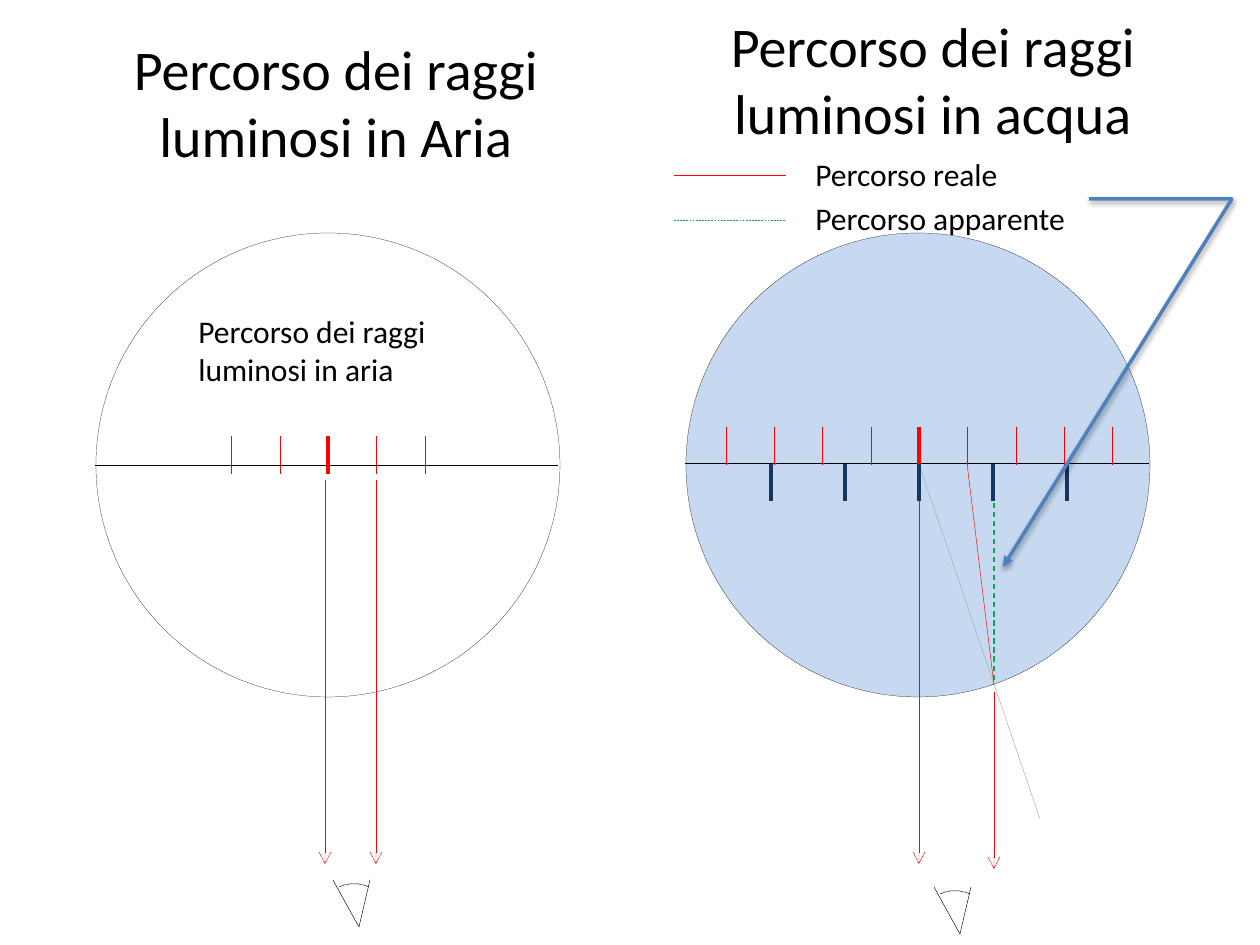
from dataclasses import dataclass
from math import cos, radians, sin

from lxml.etree import SubElement
from pptx import Presentation
from pptx.dml.color import RGBColor
from pptx.enum.dml import MSO_LINE_DASH_STYLE as Dash
from pptx.enum.shapes import MSO_CONNECTOR as Connector, MSO_SHAPE as Shape
from pptx.enum.text import MSO_AUTO_SIZE as AutoSize, PP_ALIGN as Align
from pptx.oxml.ns import qn
from pptx.util import Pt

EMU_PER_PX = 914400 / 126

BLACK = RGBColor(0x00, 0x00, 0x00)
RED = RGBColor(0xFF, 0x00, 0x00)
GREEN = RGBColor(0x00, 0xB0, 0x50)
GRAY = RGBColor(0xA6, 0xA6, 0xA6)
NAVY = RGBColor(0x17, 0x37, 0x5E)
BLUE = RGBColor(0x4F, 0x81, 0xBD)
WATER = RGBColor(0xC6, 0xD9, 0xF1)

THIN, THICK = 0.25, 2.25


@dataclass(frozen=True)
class Line:
    x1: int
    y1: int
    x2: int
    y2: int
    color: RGBColor = RED
    width: float = THIN
    dashed: bool = False
    arrow: str | None = None


@dataclass(frozen=True)
class Scale:
    """A row of evenly spaced ticks, counted from the centre."""
    center: int
    step: float
    first: int
    last: int
    top: int
    bottom: int
    color: RGBColor = RED
    all_thick: bool = False


def px(value: float) -> int:
    return round(value * EMU_PER_PX)


def add_arrowhead(shape, kind: str) -> None:
    SubElement(shape.line._get_or_add_ln(), qn("a:tailEnd"), type=kind)


def draw_line(shapes, line: Line) -> None:
    connector = shapes.add_connector(
        Connector.STRAIGHT, px(line.x1), px(line.y1), px(line.x2), px(line.y2))
    connector.line.color.rgb = line.color
    connector.line.width = Pt(line.width)
    if line.dashed:
        connector.line.dash_style = Dash.DASH
    if line.arrow:
        add_arrowhead(connector, line.arrow)
    SubElement(connector._element.spPr, qn("a:effectLst"))


def draw_scale(shapes, scale: Scale) -> None:
    for index in range(scale.first, scale.last + 1):
        x = scale.center + round(index * scale.step)
        width = THICK if scale.all_thick or index == 0 else THIN
        draw_line(shapes, Line(x, scale.top, x, scale.bottom, scale.color, width))


def draw_circle(shapes, left: int, top: int, size: int, fill: RGBColor | None) -> None:
    circle = shapes.add_shape(Shape.OVAL, px(left), px(top), px(size), px(size))
    circle.shadow.inherit = False
    if fill is None:
        circle.fill.background()
    else:
        circle.fill.solid()
        circle.fill.fore_color.rgb = fill
    circle.line.color.rgb = BLACK
    circle.line.width = Pt(0.1)


def draw_path(shapes, points: list, color: RGBColor, width: float):
    builder = shapes.build_freeform(*points[0], scale=EMU_PER_PX)
    builder.add_line_segments(points[1:], close=False)
    path = builder.convert_to_shape()
    path.shadow.inherit = False
    path.fill.background()
    path.line.color.rgb = color
    path.line.width = Pt(width)
    return path


def draw_eye(shapes, x: int, y: int) -> None:
    """Two lids that meet at (x, y) and the arc of the pupil between them."""
    for dx, dy in ((-26, -47), (11, -47)):
        draw_line(shapes, Line(x, y, x + dx, y + dy, BLACK))
    arc = [(x - 5 + 36 * sin(radians(angle)), y - 7 - 36 * cos(radians(angle)))
           for angle in range(-24, 25, 4)]
    draw_path(shapes, arc, BLACK, THIN)


def add_shadow(shape) -> None:
    effects = shape._element.spPr.find(qn("a:effectLst"))
    shadow = SubElement(effects, qn("a:outerShdw"), blurRad="40000",
                        dist="20000", dir="5400000", rotWithShape="0")
    color = SubElement(shadow, qn("a:srgbClr"), val=str(BLACK))
    SubElement(color, qn("a:alpha"), val="38000")


def add_text(shapes, text: str, *, left: int, top: int, width: int, height: int,
             size: int = 18, align: Align = Align.LEFT) -> None:
    box = shapes.add_textbox(px(left), px(top), px(width), px(height))
    frame = box.text_frame
    frame.word_wrap = True
    frame.auto_size = AutoSize.SHAPE_TO_FIT_TEXT
    paragraph = frame.paragraphs[0]
    paragraph.alignment = align
    run = paragraph.add_run()
    run.text = text
    run.font.name = "Calibri"
    run.font.size = Pt(size)
    run.font.color.rgb = BLACK


def draw_air(shapes) -> None:
    draw_circle(shapes, 96, 233, 464, None)
    draw_line(shapes, Line(558, 465, 95, 465, BLACK))
    draw_scale(shapes, Scale(328, 48.3, -2, 2, 436, 474))
    for x in (325, 376):
        draw_line(shapes, Line(x, 480, x, 864, arrow="arrow"))
    draw_eye(shapes, 359, 927)
    add_text(shapes, "Percorso dei raggi luminosi in aria",
             left=186, top=306, width=290, height=89)
    add_text(shapes, "Percorso dei raggi luminosi in Aria",
             left=96, top=28, width=480, height=149, size=32, align=Align.CENTER)


def draw_water(shapes) -> None:
    draw_circle(shapes, 686, 233, 464, WATER)
    draw_line(shapes, Line(1149, 463, 685, 463, BLACK))
    draw_scale(shapes, Scale(919, 48.3, -4, 4, 427, 465))

    # Light rays
    rays = [
        Line(994, 692, 994, 869, arrow="arrow"),
        Line(919, 480, 919, 864, arrow="arrow"),
        Line(919, 464, 1040, 819, GRAY),
        Line(967, 463, 994, 685),
        Line(994, 494, 994, 683, GREEN, 0.75, dashed=True),
    ]
    for ray in rays:
        draw_line(shapes, ray)
    draw_eye(shapes, 960, 934)
    draw_scale(shapes, Scale(919, 74, -2, 2, 464, 501, NAVY, all_thick=True))

    # Legend
    draw_line(shapes, Line(674, 175, 786, 175))
    draw_line(shapes, Line(674, 220, 786, 220, GREEN, dashed=True))
    for text, top in (("Percorso reale", 149), ("Percorso apparente", 193)):
        add_text(shapes, text, left=803, top=top, width=290, height=50)

    # Pointer from the legend to the apparent ray
    pointer = draw_path(shapes, [(1089, 199), (1232, 199), (1003, 567)], BLUE, 2)
    add_arrowhead(pointer, "triangle")
    add_shadow(pointer)
    add_text(shapes, "Percorso dei raggi luminosi in acqua",
             left=648, top=5, width=570, height=149, size=32, align=Align.CENTER)


def main() -> None:
    presentation = Presentation()
    presentation.slide_width = px(1260)
    presentation.slide_height = px(945)
    slide = presentation.slides.add_slide(presentation.slide_layouts[6])
    draw_air(slide.shapes)
    draw_water(slide.shapes)
    presentation.save("out.pptx")


if __name__ == "__main__":
    main()
